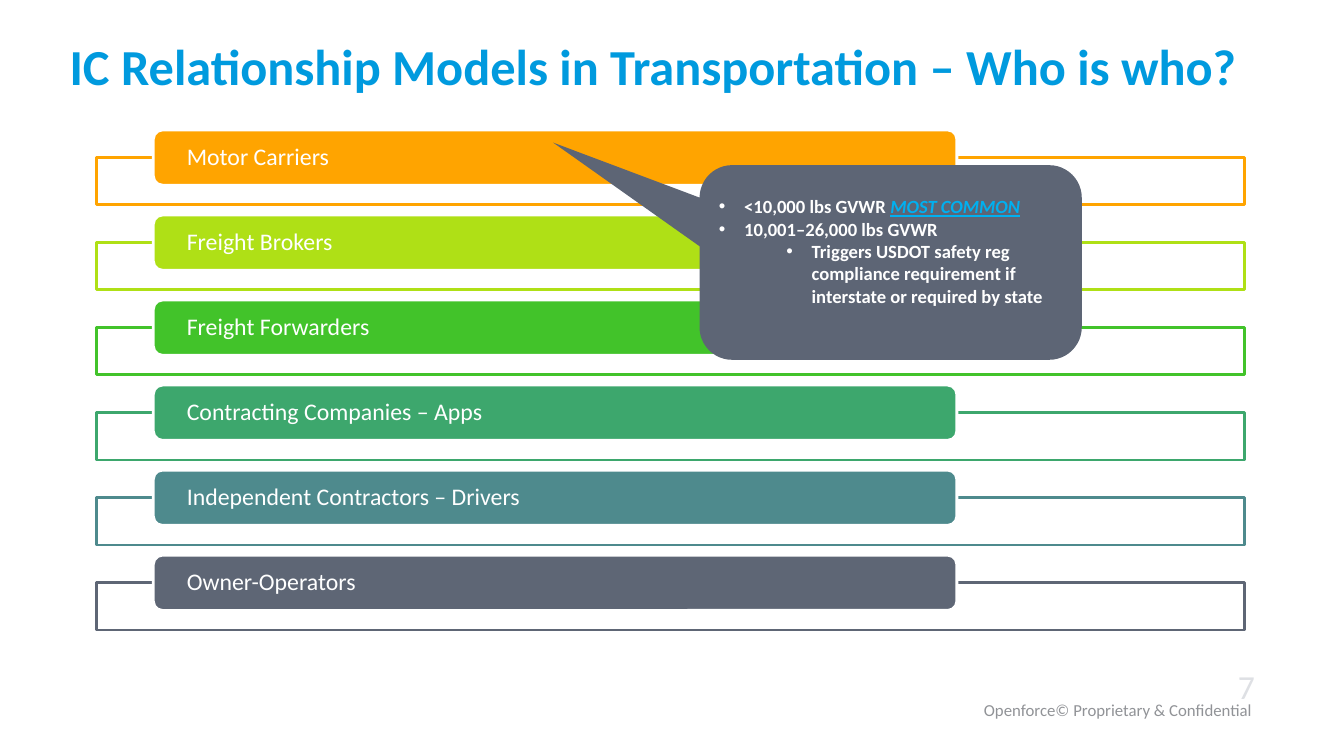
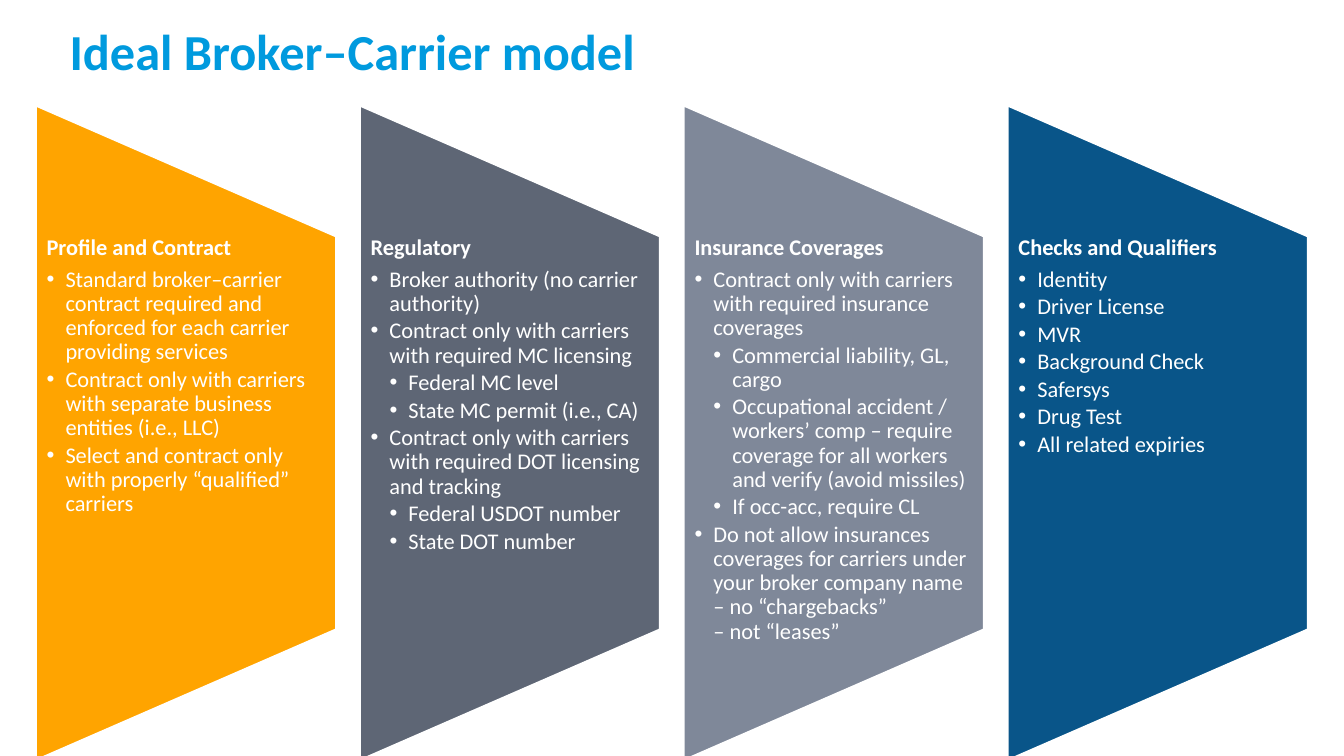
"""Build two slides on transportation contractor models."""
from dataclasses import dataclass

from lxml import etree
from pptx import Presentation
from pptx.dml.color import RGBColor
from pptx.enum import shapes, text
from pptx.oxml import ns
from pptx.util import Pt


@dataclass(frozen=True)
class Theme:
    font: str = "Calibri"
    title: str = "009ADE"
    white: str = "FFFFFF"
    footer: str = "919397"
    number: str = "DEE0E4"
    callout: str = "5D6575"
    highlight: str = "00B0F0"
    orange: str = "FFA400"
    lime: str = "AFE016"
    green: str = "42C32A"
    jade: str = "3DA76D"
    teal: str = "4E8A8D"
    slate: str = "5E6675"
    gray: str = "7F8899"
    navy: str = "095589"
    title_size: float = 36
    number_size: float = 24
    label_size: float = 17
    list_size: float = 16
    callout_size: float = 13.3
    footer_size: float = 12


theme = Theme()


def add_block(slide, kind, box, fill, line=None):
    shape = slide.shapes.add_shape(kind, *map(Pt, box))
    shape.shadow.inherit = False
    shape.fill.solid()
    shape.fill.fore_color.rgb = RGBColor.from_string(fill)
    if line:
        shape.line.color.rgb = RGBColor.from_string(line)
        shape.line.width = Pt(2)
    else:
        shape.line.fill.background()
    return shape


def write(paragraph, words, size, color, bold=False, indent=None, hang=0):
    if indent is not None:
        properties = paragraph._p.get_or_add_pPr()
        properties.set("marL", str(Pt(indent)))
        properties.set("indent", str(-Pt(hang)))
        if hang:
            etree.SubElement(properties, ns.qn("a:buFont")).set("typeface", "Arial")
            etree.SubElement(properties, ns.qn("a:buChar")).set("char", "•")
        else:
            etree.SubElement(properties, ns.qn("a:buNone"))
    for index, line in enumerate(words.split("\n")):
        if index:
            paragraph.add_line_break()
        run = paragraph.add_run()
        run.text = line
        run.font.name = theme.font
        run.font.size = Pt(size)
        run.font.bold = bold
        run.font.color.rgb = RGBColor.from_string(color)
    return run


presentation = Presentation()
presentation.slide_width, presentation.slide_height = Pt(960), Pt(540)

titles = [
    ("Title Only", "IC Relationship Models in Transportation – Who is who?", 16.5),
    ("Comparison", "Ideal Broker–Carrier model", 5.7),
]
for layout_name, title_text, top in titles:
    layout = presentation.slide_layouts.get_by_name(layout_name)
    title = presentation.slides.add_slide(layout).shapes.title
    title.left, title.top, title.width, title.height = map(Pt, (42.5, top, 917, 60))
    frame = title.text_frame
    frame.auto_size = text.MSO_AUTO_SIZE.NONE
    frame.vertical_anchor = text.MSO_ANCHOR.MIDDLE
    paragraph = frame.paragraphs[0]
    paragraph.alignment = text.PP_ALIGN.LEFT
    write(paragraph, title_text, theme.title_size, theme.title, bold=True)

models_slide, broker_slide = presentation.slides

footers = [
    ("Openforce© Proprietary & Confidential", (543.6, 492.5, 355.7, 28.8),
     text.MSO_ANCHOR.MIDDLE, theme.footer_size, theme.footer),
    ("7", (758.9, 453.6, 142.5, 53.3),
     text.MSO_ANCHOR.BOTTOM, theme.number_size, theme.number),
]
for words, box, anchor, size, color in footers:
    frame = models_slide.shapes.add_textbox(*map(Pt, box)).text_frame
    frame.word_wrap = True
    frame.vertical_anchor = anchor
    frame.margin_left = frame.margin_right = Pt(5)
    frame.margin_top = frame.margin_bottom = Pt(2.5)
    frame.paragraphs[0].alignment = text.PP_ALIGN.RIGHT
    write(frame.paragraphs[0], words, size, color)

models = [
    ("Motor Carriers", theme.orange),
    ("Freight Brokers", theme.lime),
    ("Freight Forwarders", theme.green),
    ("Contracting Companies – Apps", theme.jade),
    ("Independent Contractors – Drivers", theme.teal),
    ("Owner-Operators", theme.slate),
]
row_step = 60.75
for row, (label, color) in enumerate(models):
    bar_top = 92.8 + row * row_step
    add_block(models_slide, shapes.MSO_SHAPE.RECTANGLE,
              (69, bar_top + 19.5, 820, 34), theme.white, color)
    bar = add_block(models_slide, shapes.MSO_SHAPE.ROUNDED_RECTANGLE,
                    (109.5, bar_top, 574, 39.5), color, theme.white)
    frame = bar.text_frame
    frame.margin_left = frame.margin_right = Pt(22)
    frame.margin_top = frame.margin_bottom = 0
    frame.vertical_anchor = text.MSO_ANCHOR.MIDDLE
    paragraph = frame.paragraphs[0]
    paragraph.alignment = text.PP_ALIGN.LEFT
    paragraph.line_spacing = 0.9
    write(paragraph, label, theme.label_size, theme.white)

callout = add_block(models_slide, shapes.MSO_SHAPE.ROUNDED_RECTANGULAR_CALLOUT,
                    (499.7, 118, 273, 139), theme.callout)
for index, value in enumerate((-0.883, -0.616, 0.167)):
    callout.adjustments[index] = value
frame = callout.text_frame
frame.vertical_anchor = text.MSO_ANCHOR.MIDDLE
frame.margin_bottom = Pt(19.8)
callout_lines = [
    (0, 18, "<10,000 lbs GVWR "),
    (0, 18, "10,001–26,000 lbs GVWR"),
    (1, 66.2, "Triggers USDOT safety reg compliance requirement if "
              "interstate or required by state"),
]
for index, (level, indent, words) in enumerate(callout_lines):
    paragraph = frame.add_paragraph() if index else frame.paragraphs[0]
    paragraph.alignment = text.PP_ALIGN.LEFT
    paragraph.level = level
    write(paragraph, words, theme.callout_size, theme.white, True, indent, 18)
emphasis = write(frame.paragraphs[0], "MOST COMMON", theme.callout_size,
                 theme.highlight, bold=True)
emphasis.font.italic = emphasis.font.underline = True

columns = [
    (theme.orange, [
        (0, "Profile and Contract"),
        (1, "Standard broker–carrier contract required and enforced for each "
            "carrier providing services"),
        (1, "Contract only with carriers with separate business entities (i.e., LLC)"),
        (1, "Select and contract only with properly “qualified” carriers"),
    ]),
    (theme.slate, [
        (0, "Regulatory"),
        (1, "Broker authority (no carrier authority)"),
        (1, "Contract only with carriers with required MC licensing"),
        (2, "Federal MC level"),
        (2, "State MC permit (i.e., CA)"),
        (1, "Contract only with carriers with required DOT licensing and tracking"),
        (2, "Federal USDOT number"),
        (2, "State DOT number"),
    ]),
    (theme.gray, [
        (0, "Insurance Coverages"),
        (1, "Contract only with carriers with required insurance coverages"),
        (2, "Commercial liability, GL, cargo"),
        (2, "Occupational accident / workers’ comp – require coverage for all "
            "workers and verify (avoid missiles)"),
        (2, "If occ-acc, require CL"),
        (1, "Do not allow insurances coverages for carriers under your broker "
            "company name – no “chargebacks”\n– not “leases”"),
    ]),
    (theme.navy, [
        (0, "Checks and Qualifiers"),
        (1, "Identity"),
        (1, "Driver License"),
        (1, "MVR"),
        (1, "Background Check"),
        (1, "Safersys"),
        (1, "Drug Test"),
        (1, "All related expiries"),
    ]),
]
panel_width, panel_height, panel_middle = 215, 468.5, 309.2
column_step = 231.4
bodies = list(broker_slide.placeholders)[1:]
for column, ((color, items), body) in enumerate(zip(columns, bodies)):
    left = 25.3 + column * column_step
    panel = add_block(broker_slide, shapes.MSO_SHAPE.FLOWCHART_MANUAL_OPERATION,
                      (left + (panel_width - panel_height) / 2,
                       panel_middle - panel_width / 2, panel_height, panel_width),
                      color, theme.white)
    panel.rotation = 270
    panel.element.addnext(body.element)
    body.left, body.top, body.width, body.height = map(
        Pt, (left, 168.5, panel_width, 281.5))
    frame = body.text_frame
    frame.auto_size = text.MSO_AUTO_SIZE.NONE
    frame.vertical_anchor = text.MSO_ANCHOR.TOP
    frame.margin_left = frame.margin_right = Pt(8)
    frame.margin_top = frame.margin_bottom = 0
    for index, (level, words) in enumerate(items):
        paragraph = frame.add_paragraph() if index else frame.paragraphs[0]
        paragraph.level = level
        paragraph.alignment = text.PP_ALIGN.LEFT
        paragraph.line_spacing = 0.9
        paragraph.space_before = Pt(0)
        paragraph.space_after = Pt(2.4 if level else 5.6)
        write(paragraph, words, theme.list_size, theme.white, level == 0,
              level * 13.5, 13.5 if level else 0)

presentation.save("out.pptx")
